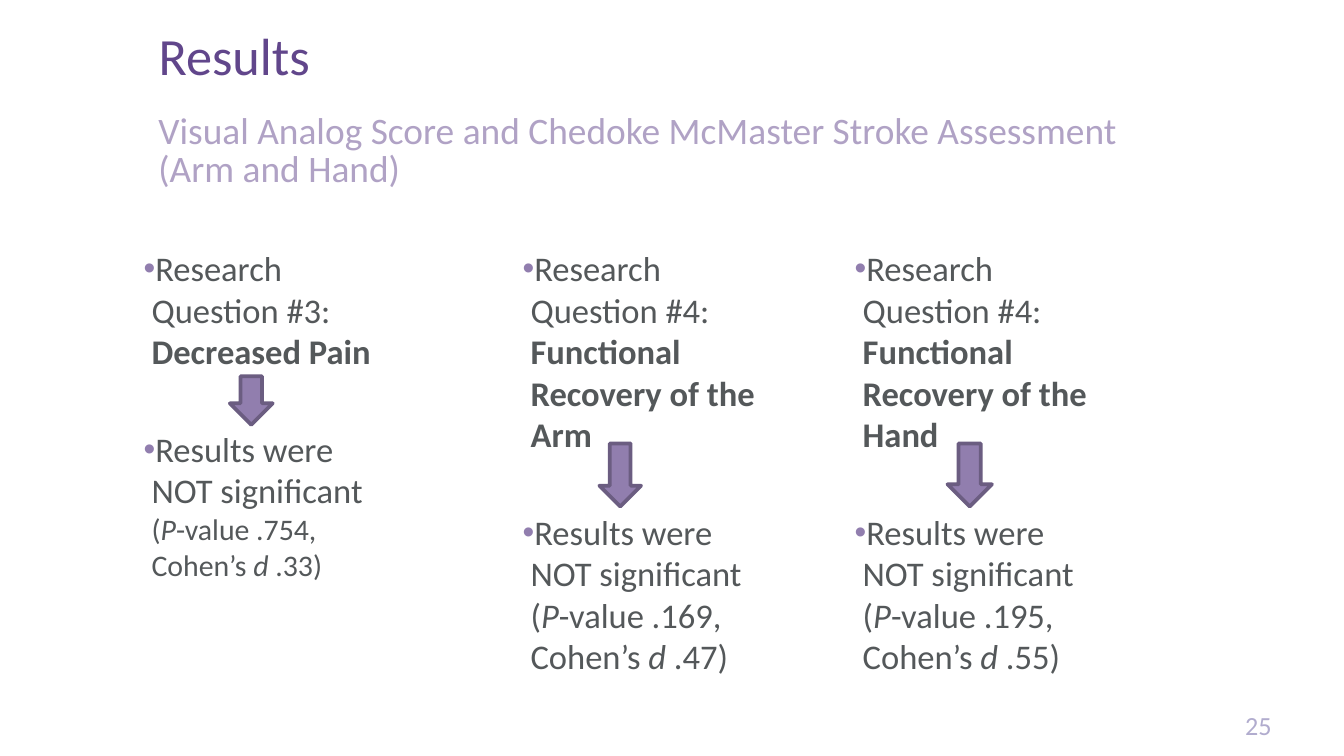
"""Build the results slide with three research-question columns."""
import pptx
import pptx.dml.color
import pptx.enum.shapes
import pptx.enum.text
import pptx.util
from lxml import etree

Pt = pptx.util.Pt
ANCHOR = pptx.enum.text.MSO_ANCHOR
ALIGN = pptx.enum.text.PP_ALIGN
DOWN_ARROW = pptx.enum.shapes.MSO_SHAPE.DOWN_ARROW
NS = "http://schemas.openxmlformats.org/drawingml/2006/main"


def color(value):
    return pptx.dml.color.RGBColor.from_string(value)


class Deck:
    font = "Calibri"
    purple = "61468B"
    lilac = "B0A2C5"
    accent = "917EAE"
    outline = "6B5D81"
    body = "54585A"
    number = "B1ACCE"
    body_size = 18.5

    def __init__(self, width, height):
        self.prs = pptx.Presentation()
        self.prs.slide_width, self.prs.slide_height = Pt(width), Pt(height)
        self.s = self.prs.slides.add_slide(self.prs.slide_layouts[5])

    def style(self, r, size, fill, bold=False, italic=False):
        f = r.font
        f.name, f.size, f.bold, f.italic = self.font, Pt(size), bold, italic
        f.color.rgb = color(fill)

    def frame(self, sp, margin=7.2, anchor=ANCHOR.TOP):
        tf = sp.text_frame
        tf.word_wrap = True
        tf.auto_size = pptx.enum.text.MSO_AUTO_SIZE.NONE
        tf.vertical_anchor = anchor
        tf.margin_left = tf.margin_right = Pt(margin)
        tf.margin_top = tf.margin_bottom = Pt(margin)
        return tf

    def box(self, x, y, w, h):
        return self.s.shapes.add_textbox(Pt(x), Pt(y), Pt(w), Pt(h))

    def line(self, tf, text, size, fill, align=ALIGN.LEFT, spacing=None):
        tf.text = text
        p = tf.paragraphs[0]
        p.alignment = align
        p.line_spacing = spacing
        self.style(p.runs[0], size, fill)

    def title(self, text, x, y, w, h):
        sp = self.s.shapes.title
        sp.left, sp.top, sp.width, sp.height = Pt(x), Pt(y), Pt(w), Pt(h)
        self.line(self.frame(sp, anchor=ANCHOR.BOTTOM), text, 28, self.purple, spacing=0.85)

    def subtitle(self, text, x, y, w, h):
        self.line(self.frame(self.box(x, y, w, h)), text, 20, self.lilac, spacing=0.85)

    def page_number(self, text, x, y, w, h):
        tf = self.frame(self.box(x, y, w, h), 0, ANCHOR.BOTTOM)
        self.line(tf, text, 14, self.number, ALIGN.RIGHT)

    def bullet(self, p):
        pPr = p._p.get_or_add_pPr()
        pPr.set("marL", str(Pt(13.7)))
        pPr.set("indent", str(Pt(-4.3)))
        clr = etree.SubElement(pPr, f"{{{NS}}}buClr")
        etree.SubElement(clr, f"{{{NS}}}srgbClr", val=self.accent)
        etree.SubElement(pPr, f"{{{NS}}}buSzPct", val="97000")
        etree.SubElement(pPr, f"{{{NS}}}buFont", typeface="Arial")
        etree.SubElement(pPr, f"{{{NS}}}buChar", char="•")

    def column(self, question, topic, p_value, effect, x, y, w, h, stat_size):
        tf = self.frame(self.box(x, y, w, h))
        size = self.body_size
        paragraphs = [
            [(f"Research Question {question}: ", size, False, False),
             (topic, size, True, False)],
            [("Results were NOT significant ", size, False, False),
             ("(", stat_size, False, False),
             ("P", stat_size, False, True),
             (f"-value {p_value}, Cohen’s ", stat_size, False, False),
             ("d", stat_size, False, True),
             (f" {effect})", stat_size, False, False)],
        ]
        for i, runs in enumerate(paragraphs):
            p = tf.add_paragraph() if i else tf.paragraphs[0]
            self.bullet(p)
            p.space_before = Pt(30 if i else 0)
            for text, run_size, bold, italic in runs:
                r = p.add_run()
                r.text = text
                self.style(r, run_size, self.body, bold, italic)

    def arrow(self, x, y, w, h):
        sp = self.s.shapes.add_shape(DOWN_ARROW, Pt(x), Pt(y), Pt(w), Pt(h))
        sp.shadow.inherit = False
        sp.fill.solid()
        sp.fill.fore_color.rgb = color(self.accent)
        sp.line.color.rgb = color(self.outline)
        sp.line.width = Pt(2)


def main():
    deck = Deck(720, 405)
    deck.title("Results", 77.8, 8.6, 607.7, 44.6)
    deck.subtitle("Visual Analog Score and Chedoke McMaster Stroke Assessment (Arm and Hand)",
                  77.8, 54, 540, 27.4)
    columns = [
        ("#3", "Decreased Pain", ".754", ".33", 60.5, 153.4, 16),
        ("#4", "Functional Recovery of the Arm", ".169", ".47", 263.5, 152, 18.5),
        ("#4", "Functional Recovery of the Hand", ".195", ".55", 441.4, 152, 18.5),
    ]
    for question, topic, p_value, effect, x, w, stat_size in columns:
        deck.column(question, topic, p_value, effect, x, 125.3, w, 242, stat_size)
    for x, y, w, h in [(123.1, 201.6, 23, 26), (321.1, 237.6, 22.3, 33.8),
                       (507.6, 237.6, 23.8, 33.8)]:
        deck.arrow(x, y, w, h)
    deck.page_number("25", 653.8, 383, 27.4, 13.7)
    deck.prs.save("out.pptx")


if __name__ == "__main__":
    main()
